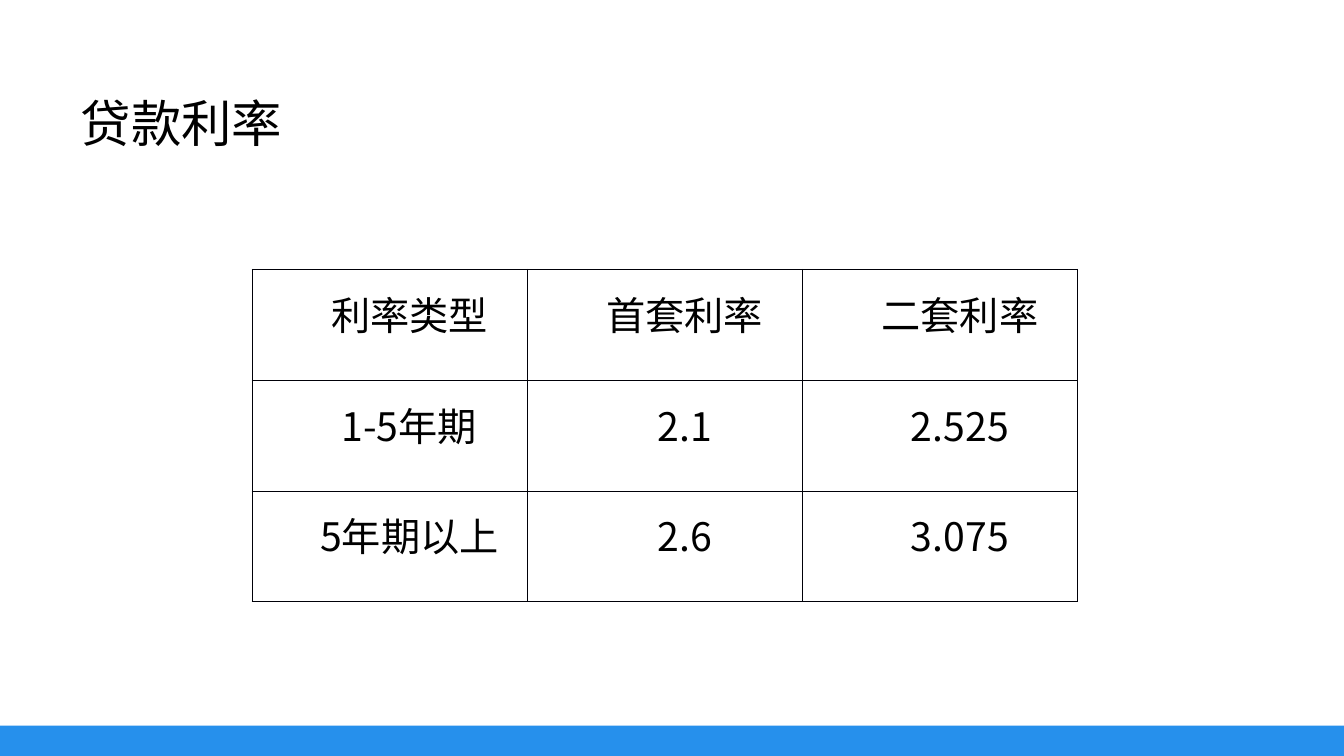
from lxml import etree
from pptx import Presentation
from pptx import util as u
from pptx.dml.color import RGBColor
from pptx.enum import shapes, text
from pptx.oxml import ns

BLACK = RGBColor(0x00, 0x00, 0x00)
BLUE = RGBColor(0x26, 0x90, 0xEC)
BORDER = RGBColor(0x00, 0x00, 0x08)
LATIN_FONT = "Arial"
CHINESE_FONT = "Noto Sans CJK SC"

RATES = [
    ["利率类型", "首套利率", "二套利率"],
    ["1-5年期", "2.1", "2.525"],
    ["5年期以上", "2.6", "3.075"],
]


def write_text(frame, words, size, font, align, spacing, indent=0.0):
    """Fill a text frame with one formatted paragraph."""
    para = frame.paragraphs[0]
    para.alignment = align
    para.line_spacing = spacing
    para.space_before = u.Pt(0)
    properties = para._p.get_or_add_pPr()
    properties.set("marL", "0")
    properties.set("indent", str(u.Inches(indent)))
    span = para.add_run()
    span.text = words
    span.font.size = u.Pt(size)
    span.font.name = font
    span.font.color.rgb = BLACK
    east_asian = etree.SubElement(span._r.get_or_add_rPr(), ns.qn("a:ea"))
    east_asian.set("typeface", CHINESE_FONT)


class RatePage:
    def __init__(self, deck):
        self.page = deck.slides.add_slide(deck.slide_layouts[5])

    def bar(self, left, top, width, height):
        box = self.page.shapes.add_shape(
            shapes.MSO_SHAPE.RECTANGLE, u.Inches(left), u.Inches(top),
            u.Inches(width), u.Inches(height))
        box.shadow.inherit = False
        box.fill.solid()
        box.fill.fore_color.rgb = BLUE
        box.line.fill.background()

    def title(self, words, left, top, width, height):
        box = self.page.shapes.title
        box.left, box.top = u.Inches(left), u.Inches(top)
        box.width, box.height = u.Inches(width), u.Inches(height)
        frame = box.text_frame
        frame.margin_left = frame.margin_right = 0
        frame.margin_top = frame.margin_bottom = 0
        frame.auto_size = text.MSO_AUTO_SIZE.NONE
        frame.vertical_anchor = text.MSO_ANCHOR.MIDDLE
        write_text(frame, words, 36, LATIN_FONT, text.PP_ALIGN.LEFT, 1.11)

    def table(self, rows, left, top, width, height):
        table = self.page.shapes.add_table(
            len(rows), len(rows[0]), u.Inches(left), u.Inches(top),
            u.Inches(width), u.Inches(height)).table
        table.first_row = table.horz_banding = False
        for row, values in enumerate(rows):
            for column, words in enumerate(values):
                self.cell(table.cell(row, column), words)

    def cell(self, cell, words):
        cell.fill.background()
        cell.margin_left = cell.margin_right = u.Inches(0.07)
        cell.margin_top = cell.margin_bottom = 0
        cell.vertical_anchor = text.MSO_ANCHOR.MIDDLE
        write_text(cell.text_frame, words, 28, CHINESE_FONT,
                   text.PP_ALIGN.CENTER, u.Pt(24), indent=0.39)
        # Cell borders come before the fill
        properties = cell._tc.get_or_add_tcPr()
        for place, side in enumerate(("lnL", "lnR", "lnT", "lnB")):
            line = etree.Element(ns.qn(f"a:{side}"), w=str(u.Pt(0.5)))
            fill = etree.SubElement(line, ns.qn("a:solidFill"))
            etree.SubElement(fill, ns.qn("a:srgbClr"), val=str(BORDER))
            properties.insert(place, line)


def main():
    deck = Presentation()
    deck.slide_width, deck.slide_height = u.Inches(13.33), u.Inches(7.5)
    page = RatePage(deck)

    # Bottom band
    page.bar(0, 7.2, 13.33, 0.3)

    # Heading and loan rates
    page.title("贷款利率", 0.8, 0.85, 12, 0.67)
    page.table(RATES, 2.5, 2.67, 8.19, 3.3)

    deck.save("out.pptx")


if __name__ == "__main__":
    main()
